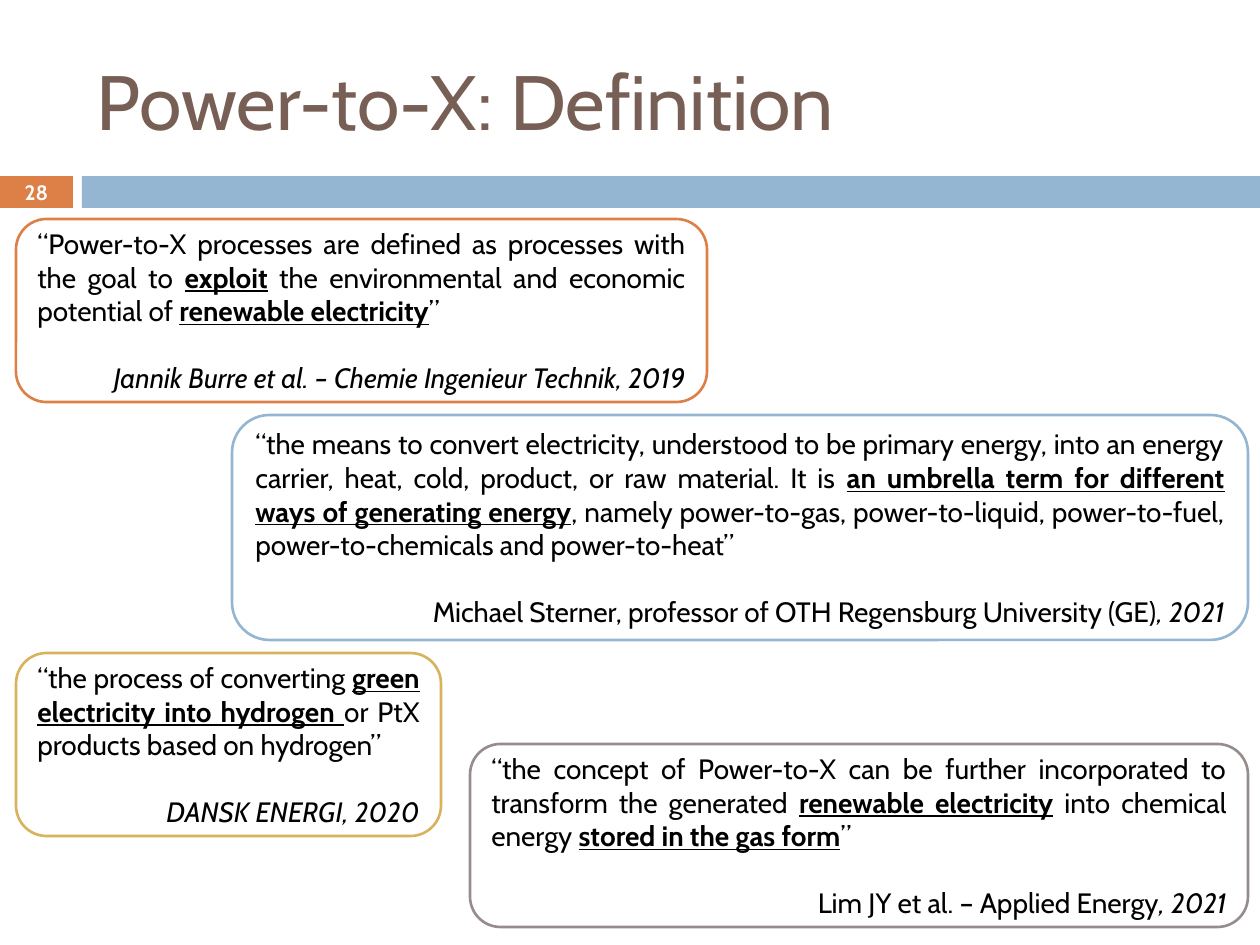
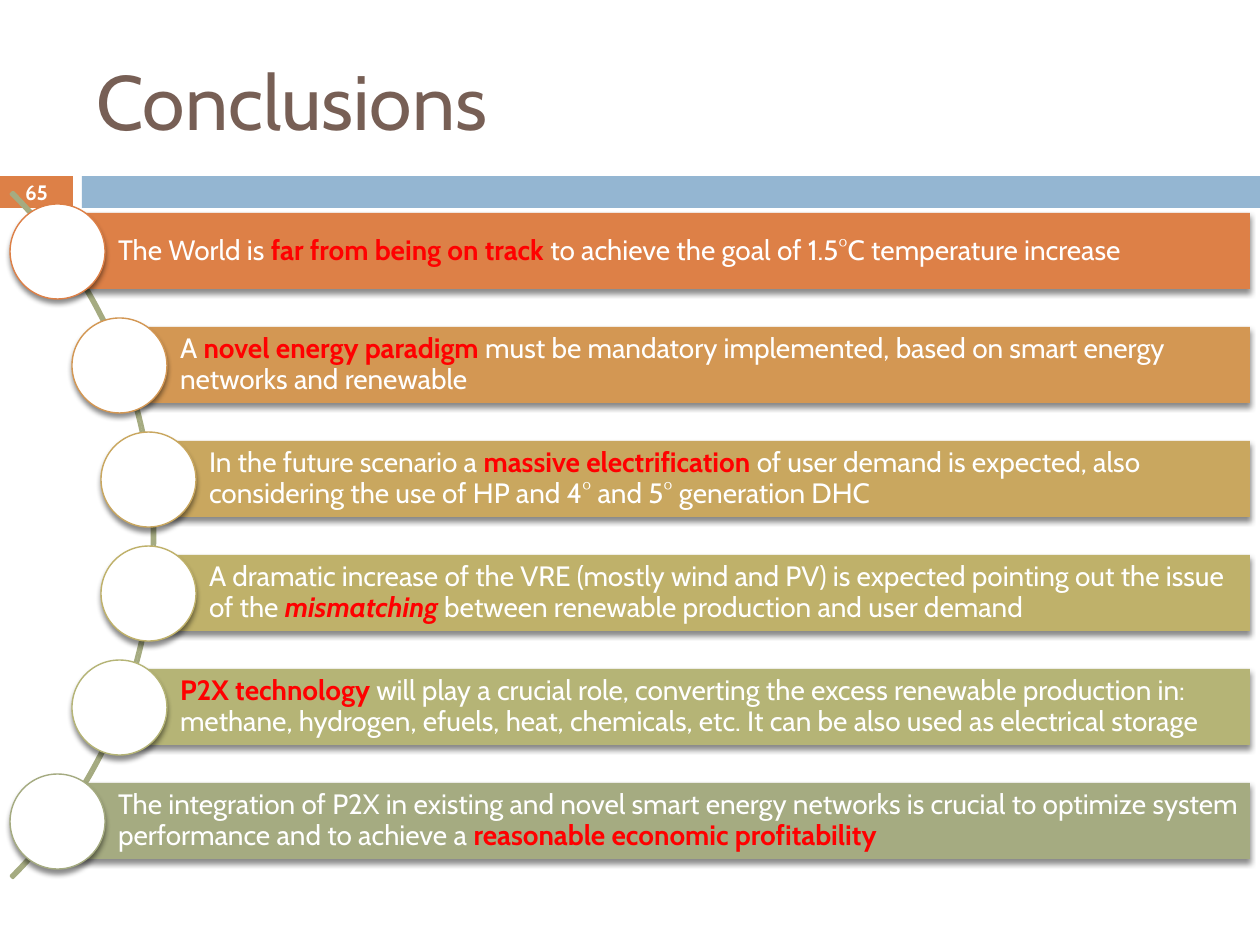
"""Builds two Power-to-X slides: the quoted definitions and the conclusions."""
from lxml.etree import SubElement
from pptx import Presentation
from pptx.dml.color import RGBColor
from pptx.enum.shapes import MSO_SHAPE
from pptx.enum.text import MSO_ANCHOR, PP_ALIGN
from pptx.oxml.ns import qn
from pptx.util import Emu, Pt

SCALE = 914400 / 126
COLORS = {
    "white": "FFFFFF", "black": "000000", "title": "775F55", "red": "FF0000",
    "orange": "DD8047", "blue": "94B6D2", "gold": "D8B25C", "mauve": "968C8C",
    "copper": "D39753", "ochre": "C9A75F", "straw": "BFB16A",
    "moss": "B5B476", "sage": "A5AB81",
}
STYLES = {
    "plain": {},
    "bold": {"bold": True},
    "italic": {"italic": True},
    "stress": {"bold": True, "underline": True},
    "alert": {"bold": True, "color": "red"},
    "slanted alert": {"bold": True, "italic": True, "color": "red"},
}


def add_box(page, kind, place, fill=None, line=None, weight=1.5, shadow=False):
    """Add a preset shape at a place in px, with an optional fill, line and shadow."""
    left, top, width, height = [Emu(round(length * SCALE)) for length in place]
    box = page.shapes.add_shape(kind, left, top, width, height)
    box.shadow.inherit = False
    if fill:
        box.fill.solid()
        box.fill.fore_color.rgb = RGBColor.from_string(COLORS[fill])
    else:
        box.fill.background()
    if line:
        box.line.color.rgb = RGBColor.from_string(COLORS[line])
        box.line.width = Pt(weight)
    else:
        box.line.fill.background()
    if shadow:
        effects = box._element.spPr.find(qn("a:effectLst"))
        outer = SubElement(effects, qn("a:outerShdw"), blurRad="38100", dist="30000",
                           dir="5400000", rotWithShape="0")
        tint = SubElement(outer, qn("a:srgbClr"), val=COLORS["black"])
        SubElement(tint, qn("a:alpha"), val="45000")
    box.text_frame.word_wrap = True
    box.text_frame.vertical_anchor = MSO_ANCHOR.MIDDLE
    return box


def write(para, spans, size, color, align=PP_ALIGN.LEFT):
    """Fill a paragraph with (text, style) spans."""
    para.alignment = align
    for text, style in spans:
        span = para.add_run()
        span.text = text
        values = {"name": "Cabin", "size": Pt(size), "bold": False, **STYLES[style]}
        span.font.color.rgb = RGBColor.from_string(COLORS[values.pop("color", color)])
        for name, value in values.items():
            setattr(span.font, name, value)


deck = Presentation()
deck.slide_width = Emu(round(1260 * SCALE))
deck.slide_height = Emu(round(945 * SCALE))

pages = []
for title, number in [("Power-to-X: Definition", "28"), ("Conclusions", "65")]:
    page = deck.slides.add_slide(deck.slide_layouts[6])
    add_box(page, MSO_SHAPE.RECTANGLE, (82, 176, 1178, 32), fill="blue")
    number_box = add_box(page, MSO_SHAPE.RECTANGLE, (0, 176, 73, 32), fill="orange")
    write(number_box.text_frame.paragraphs[0], [(number, "bold")], 11.9, "white", PP_ALIGN.CENTER)
    title_box = add_box(page, MSO_SHAPE.RECTANGLE, (84, 32, 1124, 136))
    write(title_box.text_frame.paragraphs[0], [(title, "plain")], 44, "title")
    pages.append(page)
definition_page, conclusion_page = pages

quotes = [
    ((16, 219, 691, 183), "orange",
     [("“Power-to-X processes are defined as processes with the goal to ", "plain"),
      ("exploit", "stress"),
      (" the environmental and economic potential of ", "plain"),
      ("renewable electricity", "stress"),
      ("”", "plain")],
     [("Jannik Burre et al. – Chemie Ingenieur Technik, 2019", "italic")]),
    ((232, 415, 1016, 225), "blue",
     [("“the means to convert electricity, understood to be primary energy, into an energy "
       "carrier, heat, cold, product, or raw material. It is ", "plain"),
      ("an umbrella term for different ways of generating energy", "stress"),
      (", namely power-to-gas, power-to-liquid, power-to-fuel, power-to-chemicals and "
       "power-to-heat”", "plain")],
     [("Michael Sterner, professor of OTH Regensburg University (GE)", "plain"),
      (", 2021", "italic")]),
    ((16, 653, 425, 183), "gold",
     [("“the process of converting ", "plain"),
      ("green electricity into hydrogen ", "stress"),
      ("or PtX products based on hydrogen”", "plain")],
     [("DANSK ENERGI, 2020", "italic")]),
    ((470, 744, 778, 183), "mauve",
     [("“the concept of Power-to-X can be further incorporated to transform the generated ",
       "plain"),
      ("renewable electricity", "stress"),
      (" into chemical energy ", "plain"),
      ("stored in the gas form", "stress"),
      ("”", "plain")],
     [("Lim JY et al. – Applied Energy", "plain"), (", 2021", "italic")]),
]
for place, color, quote, source in quotes:
    frame = add_box(definition_page, MSO_SHAPE.ROUNDED_RECTANGLE, place, "white", color).text_frame
    write(frame.paragraphs[0], quote, 16, "black", PP_ALIGN.JUSTIFY)
    source_para = frame.add_paragraph()
    source_para.space_before = Pt(19)
    write(source_para, source, 16, "black", PP_ALIGN.RIGHT)

arc = add_box(conclusion_page, MSO_SHAPE.BLOCK_ARC, (-815, 50, 970, 970), line="sage")
for index, value in enumerate((189, 27, 0.003)):
    arc.adjustments[index] = value

conclusions = [
    (58, "orange",
     [("The World is ", "plain"),
      ("far from being on track ", "alert"),
      ("to achieve the goal of 1.5°C temperature increase", "plain")]),
    (120, "copper",
     [("A ", "plain"),
      ("novel energy paradigm ", "alert"),
      ("must be mandatory implemented, based on smart energy networks and renewable", "plain")]),
    (149, "ochre",
     [("In the future scenario a ", "plain"),
      ("massive electrification ", "alert"),
      ("of user demand is expected, also considering the use of HP and 4° and 5° "
       "generation DHC", "plain")]),
    (149, "straw",
     [("A dramatic increase of the VRE (mostly wind and PV) is expected pointing out the "
       "issue of the ", "plain"),
      ("mismatching", "slanted alert"),
      (" between renewable production and user demand", "plain")]),
    (120, "moss",
     [("P2X technology ", "alert"),
      ("will play a crucial role, converting the excess renewable production in: methane, "
       "hydrogen, efuels, heat, chemicals, etc. It can be also used as electrical storage",
       "plain")]),
    (58, "sage",
     [("The integration of P2X in existing and novel smart energy networks is crucial to "
       "optimize system performance and to achieve a ", "plain"),
      ("reasonable economic profitability", "alert")]),
]
insets = {"margin_left": 60, "margin_top": 5, "margin_right": 5, "margin_bottom": 5}
for row, (left, color, spans) in enumerate(conclusions):
    top = 213 + 114 * row
    bar = add_box(conclusion_page, MSO_SHAPE.RECTANGLE, (left, top, 1250 - left, 76),
                  color, shadow=True)
    for name, value in insets.items():
        setattr(bar.text_frame, name, Emu(round(value * SCALE)))
    para = bar.text_frame.paragraphs[0]
    para.line_spacing = 0.9
    write(para, spans, 16, "white")
    add_box(conclusion_page, MSO_SHAPE.OVAL, (left - 48, top - 9, 95, 95),
            "white", color, 0.79, shadow=True)

deck.save("out.pptx")
